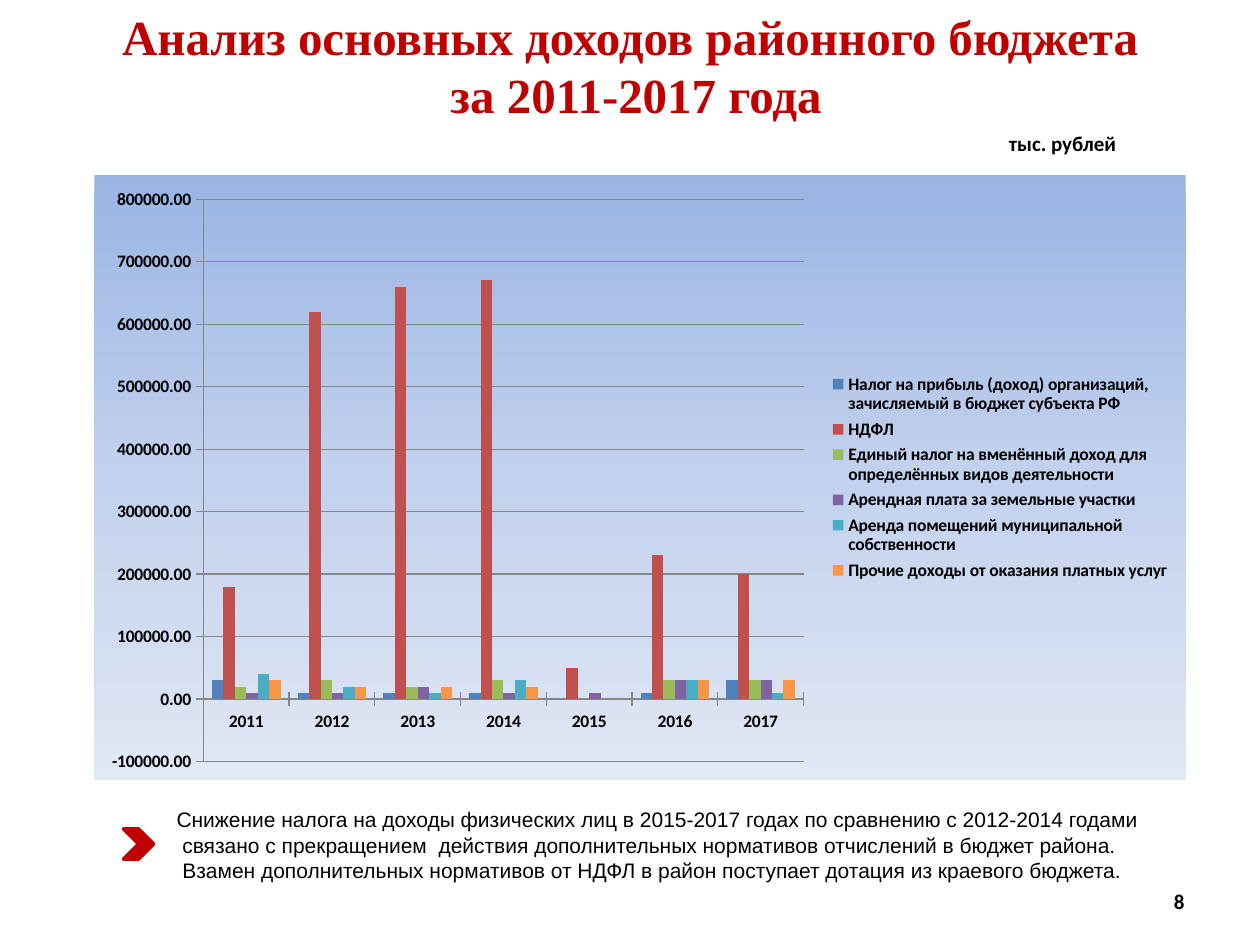
from dataclasses import dataclass

from lxml import etree
from pptx import Presentation
from pptx import util as u
from pptx.chart.data import CategoryChartData
from pptx.dml.color import RGBColor
from pptx.enum import chart as charts, shapes, text
from pptx.oxml import parse_xml
from pptx.oxml.ns import nsdecls, qn


@dataclass(frozen=True)
class Theme:
    red: str = "C00000"
    black: str = "000000"
    grid: str = "868686"
    backdrop: tuple = ((0, "9AB5E4"), (50, "C2D1ED"), (100, "E1E8F5"))
    title_size: int = 28
    body_size: int = 12
    chart_size: int = 10
    title_font: str = "Times New Roman"
    note_font: str = "Arial"
    label_font: str = "Calibri"


YEARS = [str(year) for year in range(2011, 2018)]
# Name, colour, thousands of roubles by year
INCOMES = [
    ("Налог на прибыль (доход) организаций, зачисляемый в бюджет субъекта РФ",
     "4F81BD", [30000, 10000, 10000, 10000, 0, 10000, 30000]),
    ("НДФЛ",
     "C0504D", [180000, 620000, 660000, 670000, 50000, 230000, 200000]),
    ("Единый налог на вменённый доход для определённых видов деятельности",
     "9BBB59", [20000, 30000, 20000, 30000, 0, 30000, 30000]),
    ("Арендная плата за земельные участки",
     "8064A2", [10000, 10000, 20000, 10000, 10000, 30000, 30000]),
    ("Аренда помещений муниципальной собственности",
     "4BACC6", [40000, 20000, 10000, 30000, 0, 30000, 10000]),
    ("Прочие доходы от оказания платных услуг",
     "F79646", [30000, 20000, 20000, 20000, 0, 30000, 30000]),
]


def rgb(value):
    return RGBColor.from_string(value)


def format_font(font, name, size, color, bold=False):
    font.name, font.size, font.bold = name, u.Pt(size), bold
    font.color.rgb = rgb(color)


def write(frame, lines, *, font, size, color, bold=False,
          align=text.PP_ALIGN.LEFT, indent=0):
    """Fill a text frame with one paragraph per line."""
    for number, line in enumerate(lines):
        para = frame.add_paragraph() if number else frame.paragraphs[0]
        para.alignment = align
        if indent:
            para._p.get_or_add_pPr().set("indent", str(u.Cm(indent)))
        span = para.add_run()
        span.text = line
        format_font(span.font, font, size, color, bold)


def manual_layout(x, y, w, h, inner=False):
    """Chart layout element with fractions of the chart area."""
    target = '<c:layoutTarget val="inner"/>' if inner else ""
    sides = "".join(f'<c:{key} val="{value}"/>'
                    for key, value in zip("xywh", (x, y, w, h)))
    return parse_xml(
        f'<c:layout {nsdecls("c")}><c:manualLayout>{target}'
        f'<c:xMode val="edge"/><c:yMode val="edge"/>{sides}'
        '</c:manualLayout></c:layout>')


def place(parent, layout, index):
    for old in parent.findall(qn("c:layout")):
        parent.remove(old)
    parent.insert(index, layout)


def gradient_area(stops):
    """Chart area properties with a top-to-bottom gradient and no border."""
    area = parse_xml(
        f'<c:spPr {nsdecls("c", "a")}><a:gradFill><a:gsLst/>'
        '<a:lin ang="5400000" scaled="0"/></a:gradFill>'
        '<a:ln><a:noFill/></a:ln></c:spPr>')
    stop_list = area.find(".//" + qn("a:gsLst"))
    for percent, color in stops:
        stop = etree.SubElement(stop_list, qn("a:gs"), pos=str(percent * 1000))
        etree.SubElement(stop, qn("a:srgbClr"), val=color)
    return area


class Page:
    def __init__(self, deck, theme):
        self.theme = theme
        self.slide = deck.slides.add_slide(deck.slide_layouts[6])

    def label(self, place, lines, *, wrap=True,
              anchor=text.MSO_ANCHOR.TOP, **style):
        box = self.slide.shapes.add_textbox(*map(u.Cm, place))
        frame = box.text_frame
        frame.word_wrap = wrap
        frame.vertical_anchor = anchor
        write(frame, lines, **style)

    def chevron(self, place, color):
        mark = self.slide.shapes.add_shape(
            shapes.MSO_SHAPE.CHEVRON, *map(u.Cm, place))
        mark.shadow.inherit = False
        mark.fill.solid()
        mark.fill.fore_color.rgb = rgb(color)
        mark.line.color.rgb = rgb(color)
        mark.line.width = u.Pt(2)

    def column_chart(self, place_cm, categories, rows):
        theme = self.theme
        data = CategoryChartData(number_format="0.00")
        data.categories = categories
        for name, _, values in rows:
            data.add_series(name, values)
        chart = self.slide.shapes.add_chart(
            charts.XL_CHART_TYPE.COLUMN_CLUSTERED,
            *map(u.Cm, place_cm), data).chart
        chart.has_title = False
        format_font(chart.font, theme.label_font, theme.chart_size,
                    theme.black, True)

        plot = chart.plots[0]
        plot.gap_width, plot.overlap = 150, 0
        plot.vary_by_categories = False
        for series, (_, color, _) in zip(plot.series, rows):
            series.invert_if_negative = False
            series.format.fill.solid()
            series.format.fill.fore_color.rgb = rgb(color)

        values = chart.value_axis
        values.minimum_scale, values.maximum_scale = -100000, 800000
        values.major_unit = 100000
        values.has_major_gridlines = True
        values.tick_labels.number_format = "0.00"
        values.tick_labels.number_format_is_linked = False
        for axis in (values, chart.category_axis):
            axis.major_tick_mark = charts.XL_TICK_MARK.CROSS
            axis.minor_tick_mark = charts.XL_TICK_MARK.NONE
        for part in (values, values.major_gridlines, chart.category_axis):
            part.format.line.color.rgb = rgb(theme.grid)
            part.format.line.width = u.Pt(0.75)

        chart.has_legend = True
        chart.legend.position = charts.XL_LEGEND_POSITION.RIGHT
        chart.legend.include_in_layout = False
        place(chart.legend._element, manual_layout(0.67, 0.32, 0.32, 0.36), 1)

        space = chart._chartSpace
        place(space.chart.plotArea,
              manual_layout(0.1, 0.04, 0.55, 0.93, inner=True), 0)
        space.chart.addnext(gradient_area(theme.backdrop))


def main():
    theme = Theme()
    deck = Presentation()
    deck.slide_width, deck.slide_height = u.Cm(25.4), u.Cm(19.05)
    page = Page(deck, theme)
    small = dict(font=theme.label_font, size=theme.body_size,
                 color=theme.black, bold=True)

    page.label((18.21, 17.65, 5.92, 1.02), ["8"], **small,
               anchor=text.MSO_ANCHOR.MIDDLE, align=text.PP_ALIGN.RIGHT)
    page.label((0, 0, 25.4, 2.64),
               ["Анализ основных доходов районного бюджета",
                " за 2011-2017 года"],
               font=theme.title_font, size=theme.title_size,
               color=theme.red, bold=True, align=text.PP_ALIGN.CENTER)
    page.label((2.06, 16.13, 21.54, 1.8),
               ["Снижение налога на доходы физических лиц в 2015-2017 годах "
                "по сравнению с 2012-2014 годами",
                " связано с прекращением  действия дополнительных нормативов "
                "отчислений в бюджет района.",
                " Взамен дополнительных нормативов от НДФЛ в район поступает "
                "дотация из краевого бюджета."],
               font=theme.note_font, size=theme.body_size, color=theme.black,
               wrap=False, anchor=text.MSO_ANCHOR.MIDDLE,
               align=text.PP_ALIGN.JUSTIFY, indent=1.25)
    page.chevron((2.49, 16.71, 0.61, 0.61), theme.red)
    page.column_chart((1.9, 3.53, 22, 12.19), YEARS, INCOMES)
    page.label((20.09, 2.51, 2.69, 0.76), ["тыс. рублей"], wrap=False, **small)
    deck.save("out.pptx")


if __name__ == "__main__":
    main()
